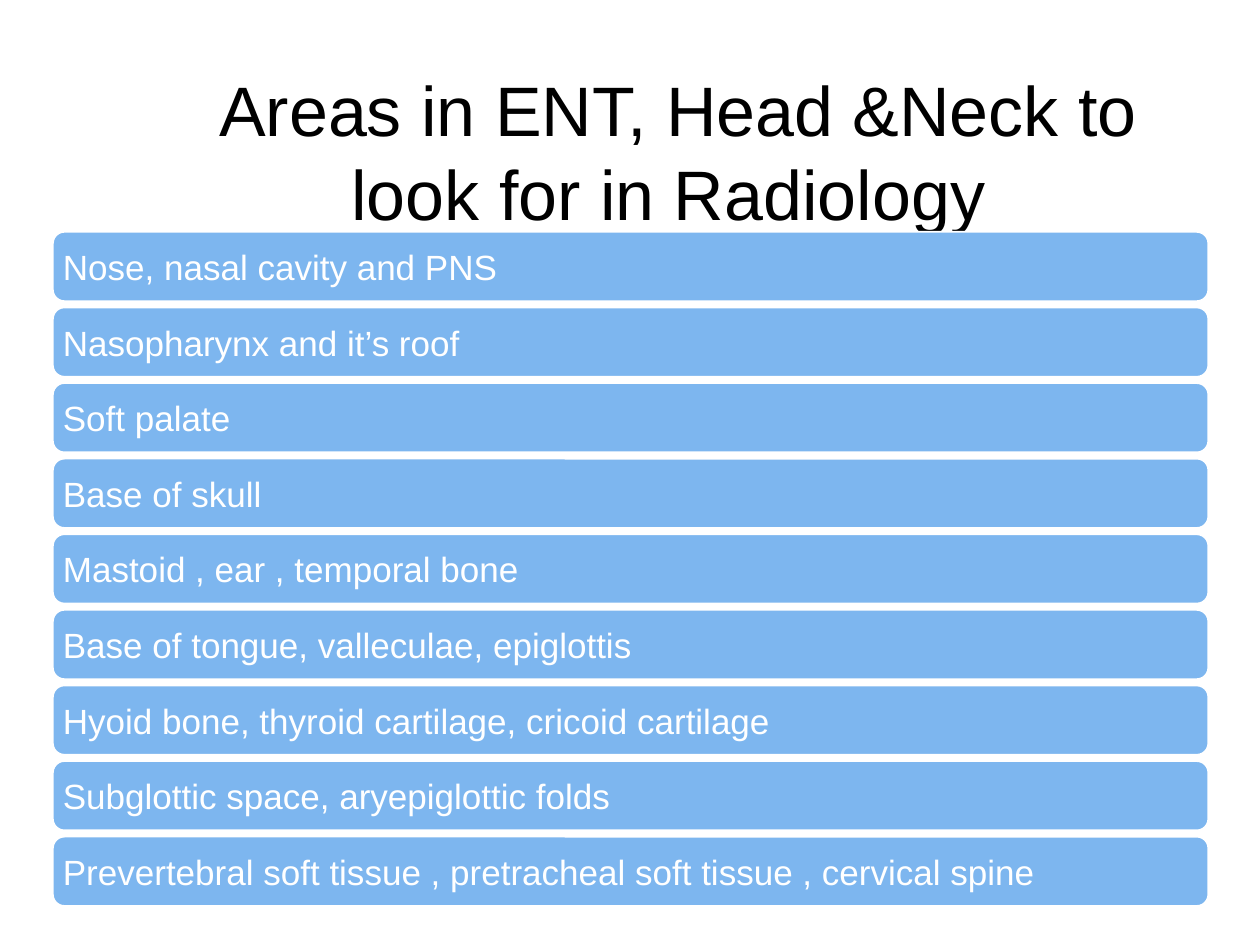
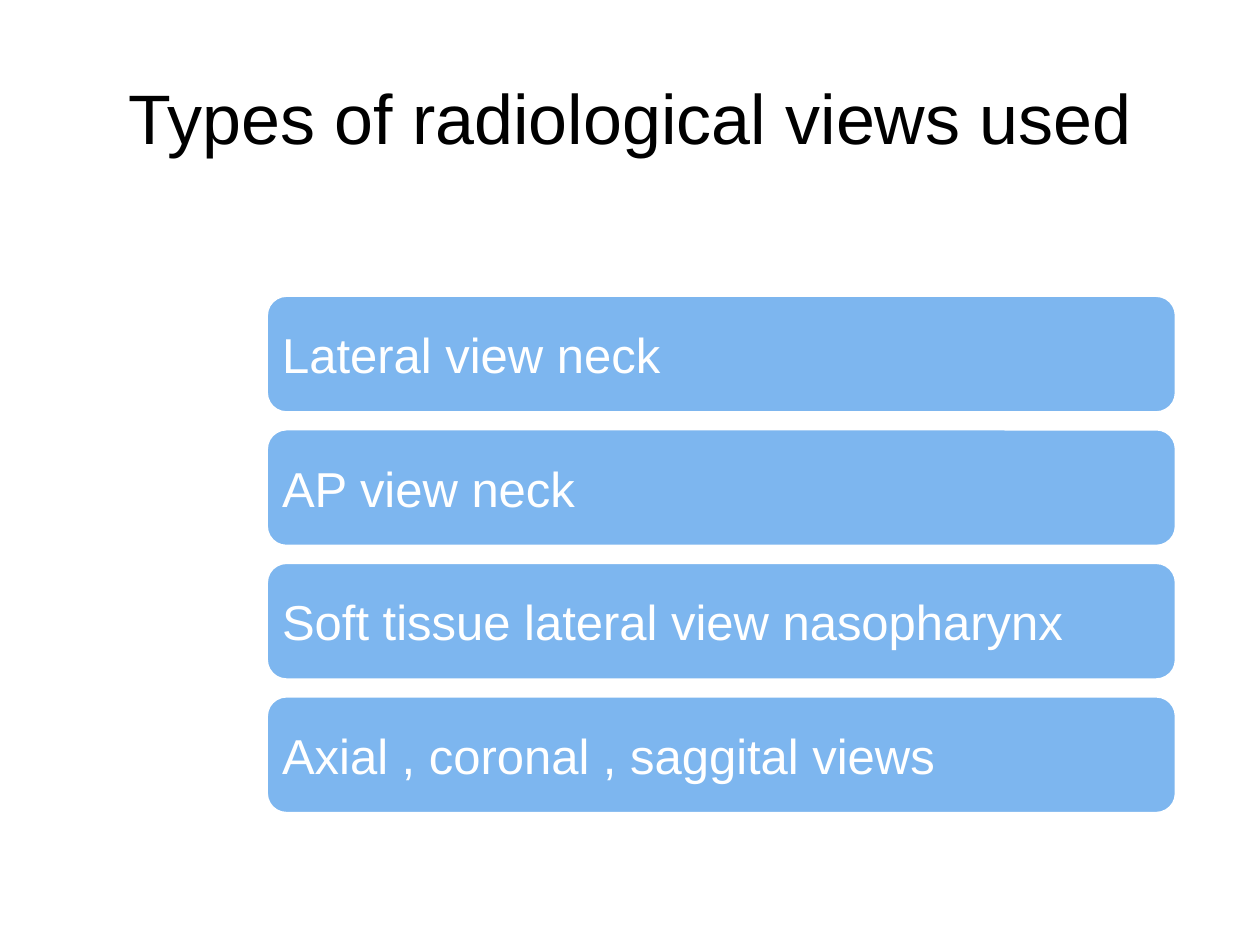
import pptx
import pptx.util
import pptx.dml.color
import pptx.enum.shapes
import pptx.enum.text

Inches = pptx.util.Inches
Pt = pptx.util.Pt
RGBColor = pptx.dml.color.RGBColor
PP_ALIGN = pptx.enum.text.PP_ALIGN

BLACK = RGBColor(0x00, 0x00, 0x00)
WHITE = RGBColor(0xFF, 0xFF, 0xFF)
SKY_BLUE = RGBColor(0x7D, 0xB6, 0xEF)
FONT_NAME = "Arial"
TITLE_SIZE = 40
CORNER_INSET_RATIO = 0.05

AREAS = [
    "Nose, nasal cavity and PNS",
    "Nasopharynx and it’s roof",
    "Soft palate",
    "Base of skull",
    "Mastoid , ear , temporal bone",
    "Base of tongue, valleculae, epiglottis",
    "Hyoid bone, thyroid cartilage, cricoid cartilage",
    "Subglottic space, aryepiglottic folds",
    "Prevertebral soft tissue , pretracheal soft tissue , cervical spine",
]
VIEWS = [
    "Lateral view neck",
    "AP view neck",
    "Soft tissue lateral view nasopharynx",
    "Axial , coronal , saggital views",
]


def write_text(frame, text, size, color, alignment):
    frame.word_wrap = True
    frame.vertical_anchor = pptx.enum.text.MSO_ANCHOR.MIDDLE
    line = frame.paragraphs[0]
    line.alignment = alignment
    words = line.add_run()
    words.text = text
    words.font.color.rgb = color
    font_format = {"name": FONT_NAME, "size": Pt(size)}
    for attribute, value in font_format.items():
        setattr(words.font, attribute, value)


def add_title(slide, text, left, top, width, height):
    title = slide.shapes.add_textbox(
        Inches(left), Inches(top), Inches(width), Inches(height))
    write_text(title.text_frame, text, TITLE_SIZE, BLACK, PP_ALIGN.CENTER)


def add_bar(slide, text, left, top, width, height, size, inset):
    bar = slide.shapes.add_shape(
        pptx.enum.shapes.MSO_SHAPE.ROUNDED_RECTANGLE,
        Inches(left), Inches(top), Inches(width), Inches(height))
    bar.shadow.inherit = False
    bar.fill.solid()
    bar.fill.fore_color.rgb = SKY_BLUE
    bar.line.color.rgb = WHITE
    bar.line.width = Pt(1)
    margin = Inches(inset - height * CORNER_INSET_RATIO)
    for side in ("left", "top", "right", "bottom"):
        setattr(bar.text_frame, f"margin_{side}", margin)
    write_text(bar.text_frame, text, size, WHITE, PP_ALIGN.LEFT)


def add_bar_list(slide, items, left, top, width, height, pitch, size, inset):
    for row, item in enumerate(items):
        add_bar(slide, item, left, top + row * pitch, width, height, size, inset)


def main():
    deck = pptx.Presentation()
    deck.slide_width = Inches(10)
    deck.slide_height = Inches(7.5)
    blank = deck.slide_layouts[6]

    areas_slide = deck.slides.add_slide(blank)
    add_title(areas_slide, "Areas in ENT, Head &Neck to look for in Radiology ",
              1.42, 0.3, 7.92, 1.79)
    add_bar_list(areas_slide, AREAS, left=0.42, top=1.84, width=9.17,
                 height=0.55, pitch=0.6, size=20, inset=0.08)

    views_slide = deck.slides.add_slide(blank)
    add_bar_list(views_slide, VIEWS, left=2.12, top=2.35, width=7.21,
                 height=0.92, pitch=1.06, size=28, inset=0.12)
    add_title(views_slide, "Types of radiological views used", 0.5, 0.3, 9, 1.25)

    deck.save("out.pptx")


if __name__ == "__main__":
    main()
